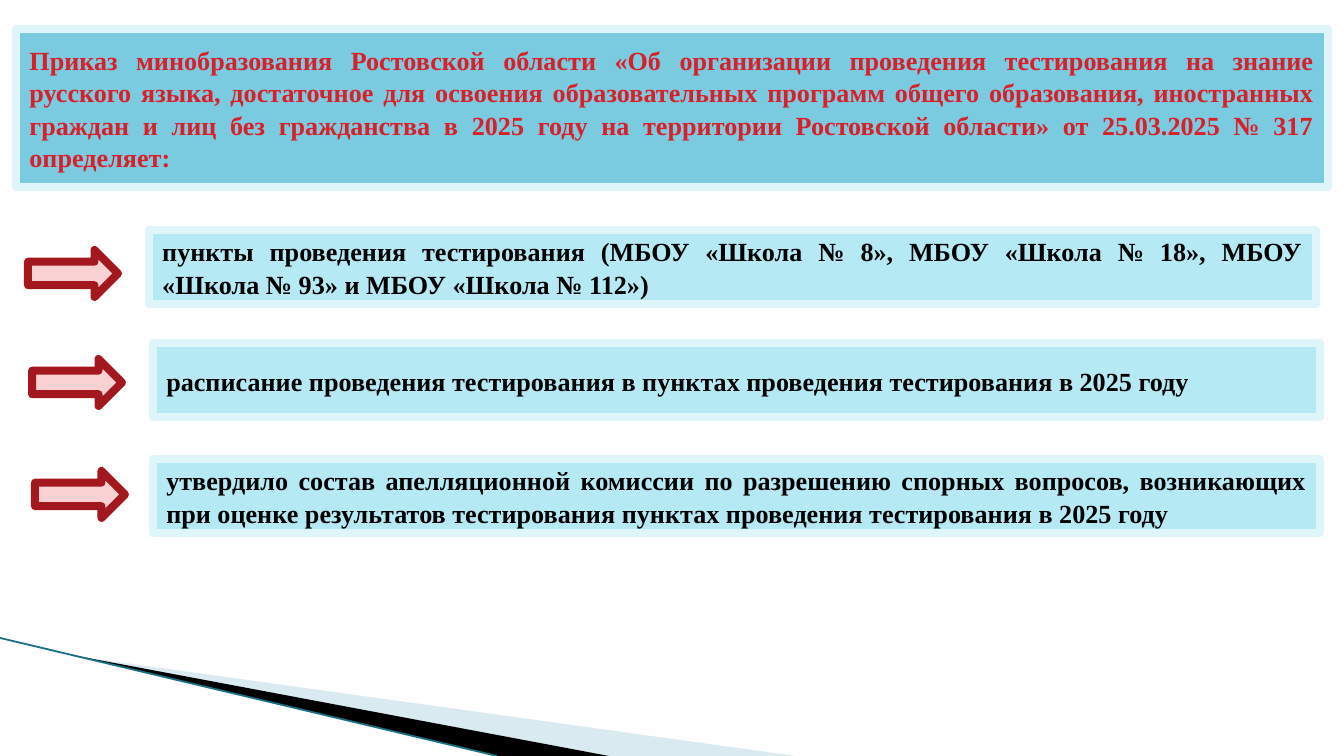
from dataclasses import dataclass

from lxml.etree import SubElement
from pptx import Presentation
from pptx.dml.color import RGBColor
from pptx.enum.shapes import MSO_CONNECTOR as Connector, MSO_SHAPE as Preset
from pptx.enum.text import MSO_ANCHOR as Anchor, MSO_AUTO_SIZE as AutoSize, PP_ALIGN as Align
from pptx.oxml.ns import qn
from pptx.util import Emu, Pt

PX = 914400 / 134.4
FONT = "Times New Roman"
BORDER = 8
ITEM_SIZE = (1167, 74)
ARROW_SIZE = (90, 47)
COLORS = {
    "header": "7ACBE0",
    "item": "B5E9F4",
    "frame": "DEF5FA",
    "heading": "DA1F28",
    "text": "000000",
    "arrow": "F9D1D3",
    "arrow_line": "A3171E",
    "wedge_light": "A0CBDC",
    "wedge_dark": "000000",
    "edge": "1B6F85",
}
HEADING = (
    "Приказ минобразования Ростовской области «Об организации проведения "
    "тестирования на знание русского языка, достаточное для освоения "
    "образовательных программ общего образования, иностранных граждан и лиц "
    "без гражданства в 2025 году на территории Ростовской области» "
    "от 25.03.2025 № 317 определяет:"
)


@dataclass
class Item:
    text: str
    box: tuple[int, int]
    arrow: tuple[int, int]


ITEMS = [
    Item("пункты проведения тестирования (МБОУ «Школа № 8», МБОУ «Школа № 18», "
         "МБОУ «Школа № 93» и МБОУ «Школа № 112»)", (149, 230), (28, 250)),
    Item("расписание проведения тестирования в пунктах проведения тестирования "
         "в 2025 году", (153, 343), (32, 359)),
    Item("утвердило состав апелляционной комиссии по разрешению спорных вопросов, "
         "возникающих при оценке результатов тестирования пунктах проведения "
         "тестирования в 2025 году", (153, 459), (35, 471)),
]


def px(value: int) -> Emu:
    return Emu(round(value * PX))


def color(name: str) -> RGBColor:
    return RGBColor.from_string(COLORS[name])


def paint(shape, fill: str, line: str) -> None:
    shape.fill.solid()
    shape.fill.fore_color.rgb = color(fill)
    shape.line.color.rgb = color(line)
    shape.line.width = px(BORDER)
    SubElement(shape.line._get_or_add_ln(), qn("a:round"))


def write(shape, text: str, font_color: str) -> None:
    frame = shape.text_frame
    frame.word_wrap = True
    frame.auto_size = AutoSize.NONE
    frame.vertical_anchor = Anchor.MIDDLE
    paragraph = frame.paragraphs[0]
    paragraph.alignment = Align.JUSTIFY
    paragraph.line_spacing = 1.04
    run = paragraph.add_run()
    run.text = text
    run.font.name = FONT
    run.font.size = Pt(14)
    run.font.bold = True
    run.font.color.rgb = color(font_color)


def add_preset(slide, preset: Preset, position: tuple[int, int],
               size: tuple[int, int], fill: str, line: str):
    shape = slide.shapes.add_shape(preset, *map(px, position + size))
    shape.shadow.inherit = False
    paint(shape, fill, line)
    return shape


def add_wedge(slide, points: list[tuple[int, int]], fill: str, opacity: int = 100) -> None:
    builder = slide.shapes.build_freeform(*points[0], scale=PX)
    builder.add_line_segments(points[1:], close=True)
    shape = builder.convert_to_shape()
    shape.shadow.inherit = False
    shape.line.fill.background()
    shape.fill.solid()
    shape.fill.fore_color.rgb = color(fill)
    if opacity < 100:
        rgb = shape._element.spPr.find(qn("a:solidFill")).find(qn("a:srgbClr"))
        SubElement(rgb, qn("a:alpha"), val=str(opacity * 1000))


def add_edge(slide, start: tuple[int, int], end: tuple[int, int]) -> None:
    connector = slide.shapes.add_connector(Connector.STRAIGHT, *map(px, start + end))
    connector.line.color.rgb = color("edge")
    connector.line.width = Pt(0.95)
    SubElement(connector._element.spPr, qn("a:effectLst"))


def add_header(slide) -> None:
    title = slide.shapes.title
    title.left, title.top, title.width, title.height = map(px, (16, 29, 1312, 158))
    paint(title, "header", "frame")
    write(title, HEADING, "heading")


def add_item(slide, item: Item) -> None:
    add_preset(slide, Preset.RIGHT_ARROW, item.arrow, ARROW_SIZE, "arrow", "arrow_line")
    box = add_preset(slide, Preset.RECTANGLE, item.box, ITEM_SIZE, "item", "frame")
    write(box, item.text, "text")


def main() -> None:
    presentation = Presentation()
    presentation.slide_width, presentation.slide_height = px(1344), px(756)
    slide = presentation.slides.add_slide(presentation.slide_layouts[5])

    add_wedge(slide, [(74, 656), (795, 756), (608, 756)], "wedge_light", 40)
    add_wedge(slide, [(72, 655), (609, 756), (497, 756)], "wedge_dark")
    add_edge(slide, (0, 638), (497, 756))
    add_header(slide)
    for item in ITEMS:
        add_item(slide, item)

    presentation.save("out.pptx")


if __name__ == "__main__":
    main()
